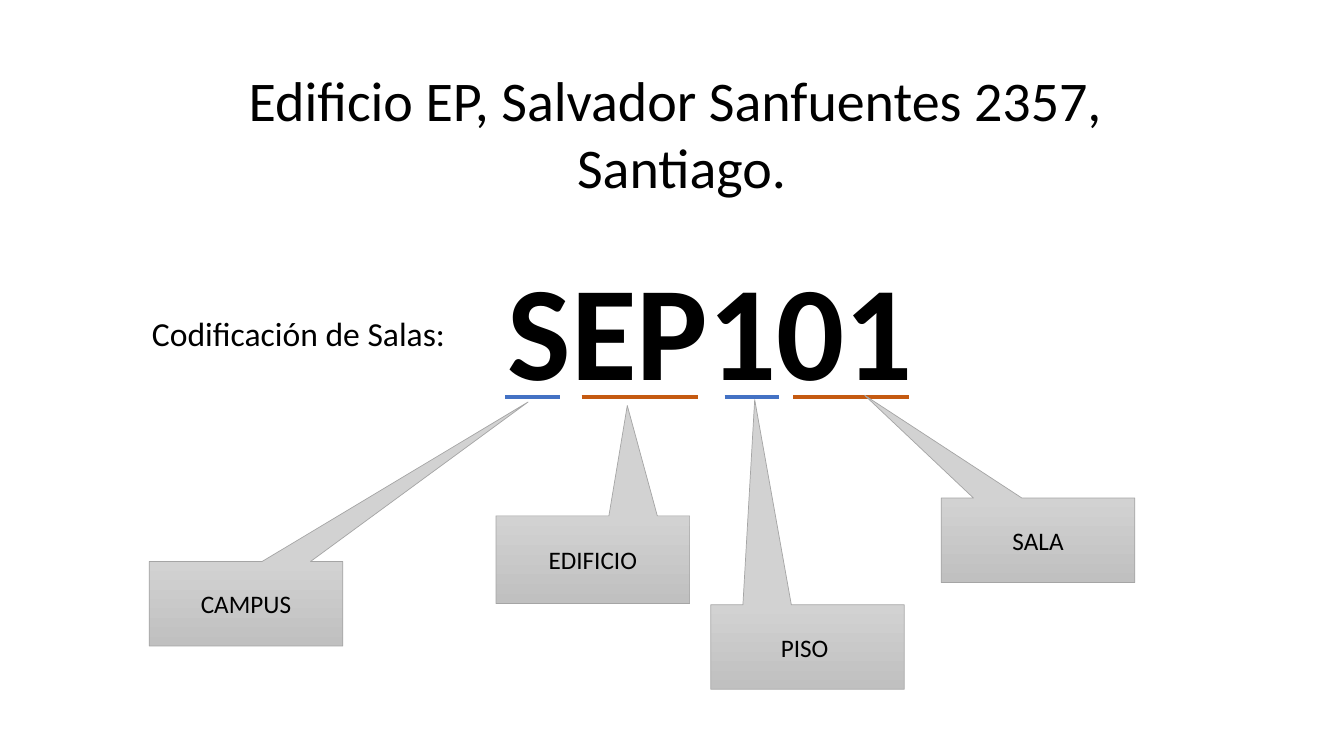
from lxml import etree
from pptx import Presentation
from pptx.dml.color import RGBColor
from pptx.enum.shapes import MSO_CONNECTOR, MSO_SHAPE
from pptx.enum.text import MSO_ANCHOR, PP_ALIGN
from pptx.oxml.ns import qn
from pptx.util import Cm, Pt

CENTER, MIDDLE = PP_ALIGN.CENTER, MSO_ANCHOR.MIDDLE
STRAIGHT, CALLOUT = MSO_CONNECTOR.STRAIGHT, MSO_SHAPE.RECTANGULAR_CALLOUT

COLORS = {
    "text": "000000",
    "outline": "FFFFFF",
    "blue": "4472C4",
    "orange": "C55A11",
    "box_top": "D2D2D2",
    "box_bottom": "C0C0C0",
    "box_line": "A5A5A5",
}
FONT = "Calibri"

# text, (left, top, width, height) in cm, size in points
ADDRESS = ("Edificio EP, Salvador Sanfuentes 2357,  Santiago.", (4.17, 1.52, 26.01, 3.68), 40)
HEADING = ("Codificación de Salas: ", (2.97, 7.75, 9.3, 3), 24)
ROOM_CODE = ("SEP101", (9.65, 6.07, 16.51, 4.37), 96)

UNDERLINE_Y = 10.01
# start x, end x, colour
UNDERLINES = [
    (12.73, 14.12, "blue"),
    (19.99, 22.91, "orange"),
    (18.26, 19.63, "blue"),
    (14.66, 17.58, "orange"),
]

CALLOUT_WIDTH = 4.88
# label, left, top, height, point of the tail (x, y)
CALLOUTS = [
    ("CAMPUS", 3.76, 14.15, 2.13, (13.31, 10.13)),
    ("EDIFICIO", 12.5, 13, 2.21, (15.81, 10.22)),
    ("PISO ", 17.91, 15.24, 2.13, (19.02, 10.07)),
    ("SALA", 23.72, 12.55, 2.13, (21.79, 9.96)),
]


def rgb(name):
    return RGBColor.from_string(COLORS[name])


def write(frame, text, size, bold=False):
    """Fill a text frame with one centred line and return its run."""
    frame.word_wrap = True
    frame.text = text
    paragraph = frame.paragraphs[0]
    paragraph.alignment = CENTER
    run = paragraph.runs[0]
    run.font.name = FONT
    run.font.size = Pt(size)
    run.font.bold = bold
    run.font.color.rgb = rgb("text")
    return run


def add_text(shapes, content, bold=False):
    text, box, size = content
    return write(shapes.add_textbox(*map(Cm, box)).text_frame, text, size, bold)


def outline_letters(run, color, points):
    properties = run.font._element
    line = etree.Element(qn("a:ln"), w=str(Pt(points)))
    fill = etree.SubElement(line, qn("a:solidFill"))
    etree.SubElement(fill, qn("a:srgbClr"), val=COLORS[color])
    properties.insert(0, line)


def add_underline(shapes, start, end, color):
    underline = shapes.add_connector(STRAIGHT, Cm(start), Cm(UNDERLINE_Y), Cm(end), Cm(UNDERLINE_Y))
    underline.line.color.rgb = rgb(color)
    underline.line.width = Pt(3)
    etree.SubElement(underline._element.spPr, qn("a:effectLst"))


def add_callout(shapes, label, left, top, height, tip):
    callout = shapes.add_shape(CALLOUT, Cm(left), Cm(top), Cm(CALLOUT_WIDTH), Cm(height))
    # The tail is measured from the centre, as a share of the box size
    callout.adjustments[0] = (tip[0] - left) / CALLOUT_WIDTH - 0.5
    callout.adjustments[1] = (tip[1] - top) / height - 0.5
    callout.shadow.inherit = False
    callout.fill.gradient()
    callout.fill.gradient_angle = 270
    for stop, position, color in zip(callout.fill.gradient_stops, (0, 1), ("box_top", "box_bottom")):
        stop.position = position
        stop.color.rgb = rgb(color)
    callout.line.color.rgb = rgb("box_line")
    callout.line.width = Pt(0.5)
    callout.text_frame.vertical_anchor = MIDDLE
    write(callout.text_frame, label, 18)


def main():
    deck = Presentation()
    deck.slide_width, deck.slide_height = Cm(33.87), Cm(19.05)
    slide = deck.slides.add_slide(deck.slide_layouts[6])

    add_text(slide.shapes, ADDRESS)
    add_text(slide.shapes, HEADING)

    code_group = slide.shapes.add_group_shape()
    outline_letters(add_text(code_group.shapes, ROOM_CODE, bold=True), "outline", 0.75)
    for underline in UNDERLINES:
        add_underline(code_group.shapes, *underline)

    for callout in CALLOUTS:
        add_callout(slide.shapes, *callout)
    deck.save("out.pptx")


if __name__ == "__main__":
    main()
